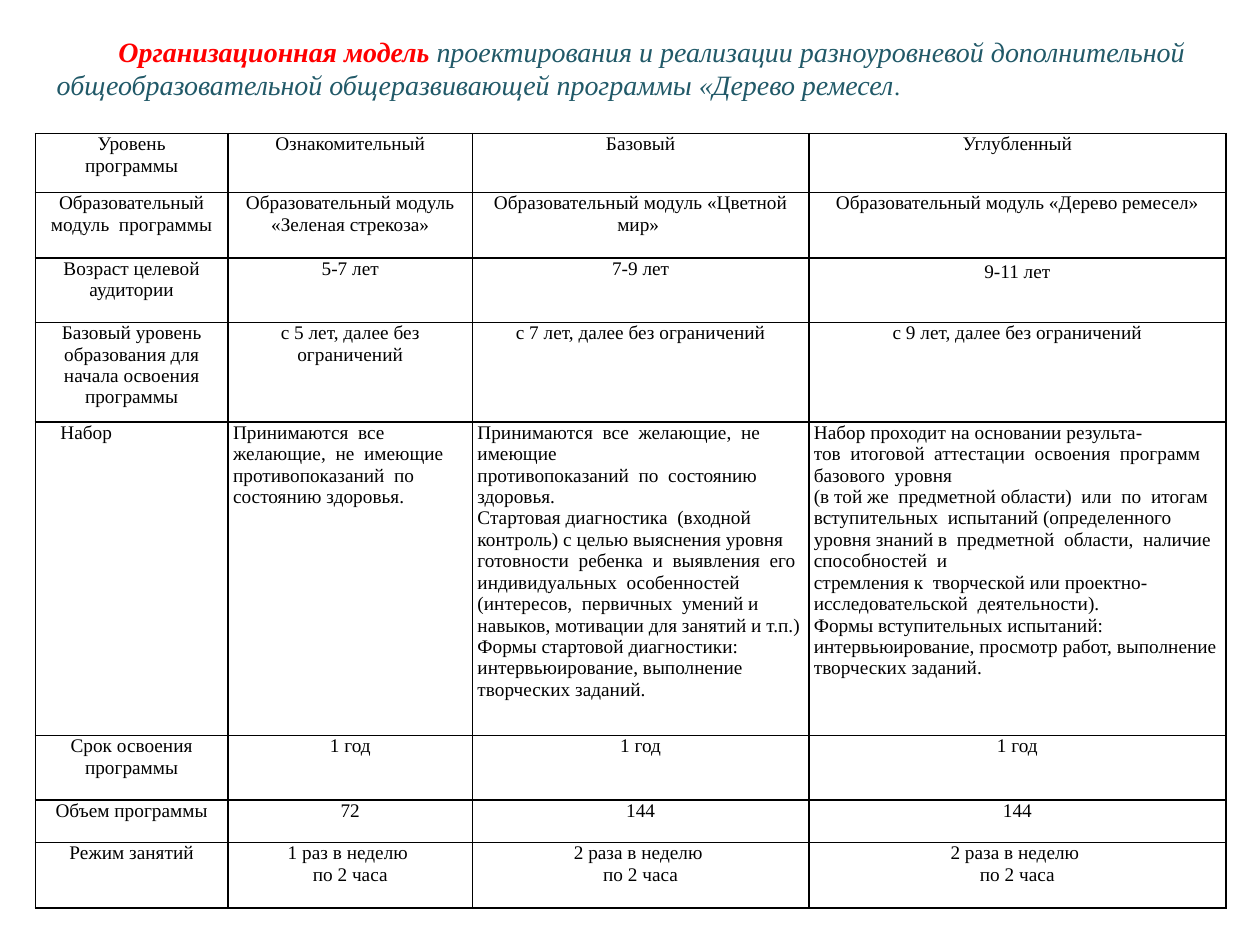
from lxml.etree import SubElement
from pptx import Presentation
from pptx.dml.color import RGBColor
from pptx.enum.text import MSO_ANCHOR, MSO_AUTO_SIZE, PP_ALIGN
from pptx.oxml.ns import qn
from pptx.util import Inches, Pt

COLORS = {"text": "000000", "accent": "FF0000", "title": "215968", "border": "000000"}
COLUMN_WIDTHS = [1.53, 1.94, 2.67, 3.31]
ROW_HEIGHTS = [0.47, 0.52, 0.51, 0.79, 2.49, 0.51, 0.34, 0.52]
ENROLMENT_ROW = 4
ROWS = [
    ["Уровень\nпрограммы", "Ознакомительный", "Базовый", "Углубленный"],
    ["Образовательный модуль  программы",
     "Образовательный модуль «Зеленая стрекоза»",
     "Образовательный модуль «Цветной мир» ",
     "Образовательный модуль «Дерево ремесел»"],
    ["Возраст целевой аудитории", "5-7 лет", "7-9 лет", "9-11 лет"],
    ["Базовый уровень образования для начала освоения программы",
     "с 5 лет, далее без ограничений",
     "с 7 лет, далее без ограничений",
     "с 9 лет, далее без ограничений"],
    ["Набор",
     "Принимаются  все  желающие,  не  имеющие\n"
     "противопоказаний  по  состоянию здоровья.",
     "Принимаются  все  желающие,  не  имеющие\n"
     "противопоказаний  по  состоянию  здоровья.\n"
     "Стартовая диагностика  (входной контроль) с целью выяснения уровня "
     "готовности  ребенка  и  выявления  его  индивидуальных  особенностей  "
     "(интересов,  первичных  умений и навыков, мотивации для занятий и т.п.)\n"
     "Формы стартовой диагностики: интервьюирование, выполнение творческих заданий.",
     "Набор проходит на основании результа-\n"
     "тов  итоговой  аттестации  освоения  программ  базового  уровня\n"
     "(в той же  предметной области)  или  по  итогам вступительных  "
     "испытаний (определенного\n"
     "уровня знаний в  предметной  области,  наличие  способностей  и\n"
     "стремления к  творческой или проектно-исследовательской  деятельности).\n"
     "Формы вступительных испытаний: интервьюирование, просмотр работ, "
     "выполнение творческих заданий."],
    ["Срок освоения программы", "1 год", "1 год", "1 год"],
    ["Объем программы", "72", "144", "144"],
    ["Режим занятий", "1 раз в неделю \nпо 2 часа",
     "2 раза в неделю \nпо 2 часа", "2 раза в неделю \nпо 2 часа"],
]


class SlideBuilder:
    """Holds the text style and the current slide."""

    def __init__(self, slide, font_name="Times New Roman"):
        self.slide = slide
        self.font_name = font_name

    def format_run(self, run, size, color, bold=False, italic=False):
        font = run.font
        font.name, font.size = self.font_name, Pt(size)
        font.bold, font.italic = bold, italic
        font.color.rgb = RGBColor.from_string(COLORS[color])

    def indent(self, paragraph, width):
        properties = paragraph._p.get_or_add_pPr()
        properties.set("marL", "0")
        properties.set("indent", str(Inches(width)))

    def add_title(self, box, parts):
        title = self.slide.shapes.title
        title.left, title.top, title.width, title.height = map(Inches, box)
        frame = title.text_frame
        frame.word_wrap = True
        frame.auto_size = MSO_AUTO_SIZE.NONE
        frame.vertical_anchor = MSO_ANCHOR.TOP
        paragraph = frame.paragraphs[0]
        paragraph.alignment = PP_ALIGN.LEFT
        self.indent(paragraph, 0.49)
        for text, size, color, bold, italic in parts:
            run = paragraph.add_run()
            run.text = text
            self.format_run(run, size, color, bold, italic)

    def add_borders(self, cell):
        properties = cell._tc.get_or_add_tcPr()
        for side in ("lnL", "lnR", "lnT", "lnB"):
            line = SubElement(properties, qn(f"a:{side}"), w=str(Pt(1)))
            fill = SubElement(line, qn("a:solidFill"))
            SubElement(fill, qn("a:srgbClr"), val=COLORS["border"])

    def fill_cell(self, cell, text, alignment):
        cell.margin_left = cell.margin_right = Inches(0.04)
        cell.margin_top = cell.margin_bottom = 0
        self.add_borders(cell)
        cell.fill.background()
        cell.text_frame.text = text
        for paragraph in cell.text_frame.paragraphs:
            paragraph.alignment = alignment
            for run in paragraph.runs:
                self.format_run(run, 11, "text")

    def add_table(self, left, top, rows, widths, heights):
        table = self.slide.shapes.add_table(
            len(rows), len(widths), Inches(left), Inches(top),
            Inches(sum(widths)), Inches(sum(heights))).table
        table.first_row = table.horz_banding = False
        for column, width in zip(table.columns, widths):
            column.width = Inches(width)
        for row, height in zip(table.rows, heights):
            row.height = Inches(height)
        for row_index, texts in enumerate(rows):
            alignment = PP_ALIGN.LEFT if row_index == ENROLMENT_ROW else PP_ALIGN.CENTER
            for column_index, text in enumerate(texts):
                self.fill_cell(table.cell(row_index, column_index), text, alignment)
        return table


def main():
    presentation = Presentation()
    presentation.slide_width, presentation.slide_height = Inches(10), Inches(7.5)
    slide = presentation.slides.add_slide(presentation.slide_layouts[5])
    builder = SlideBuilder(slide)
    table = builder.add_table(0.28, 1.06, ROWS, COLUMN_WIDTHS, ROW_HEIGHTS)
    builder.indent(table.cell(ENROLMENT_ROW, 0).text_frame.paragraphs[0], 0.16)
    table.cell(2, 3).text_frame.paragraphs[0].line_spacing = 1.15
    builder.add_title((0.35, 0.22, 9.47, 0.8), [
        ("Организационная модель ", 16, "accent", True, True),
        ("проектирования и реализации разноуровневой дополнительной "
         "общеобразовательной общеразвивающей программы «Дерево ремесел",
         16, "title", False, True),
        (".", 14, "title", False, False),
    ])
    presentation.save("out.pptx")


if __name__ == "__main__":
    main()
